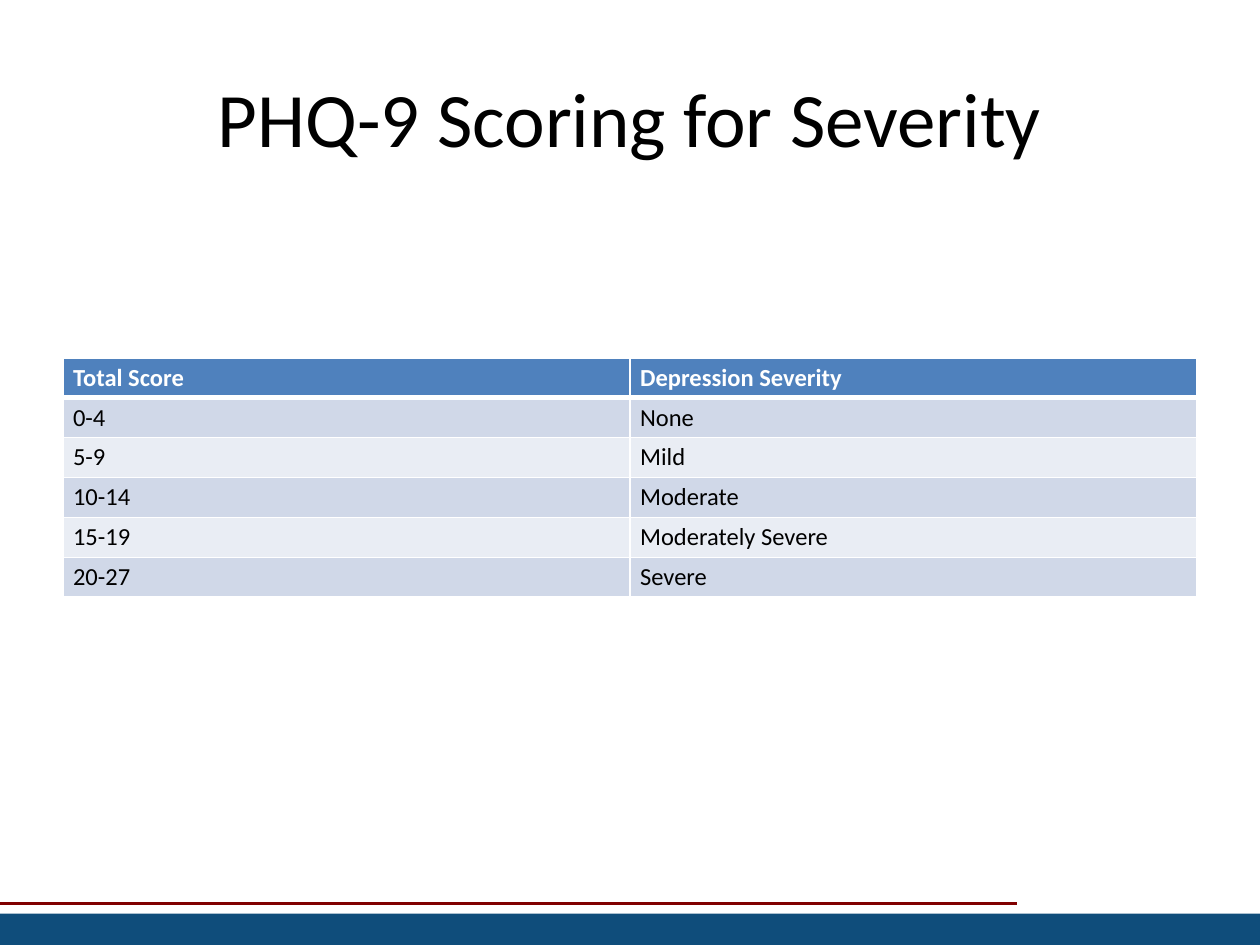
from lxml.etree import SubElement
from pptx import Presentation
from pptx.dml.color import RGBColor
from pptx.enum.shapes import MSO_CONNECTOR, MSO_SHAPE
from pptx.enum.text import MSO_ANCHOR, PP_ALIGN
from pptx.oxml.ns import qn
from pptx.util import Inches, Pt

TITLE = "PHQ-9 Scoring for Severity"
ROWS = [
    ("Total Score", "Depression Severity"),
    ("0-4", "None"),
    ("5-9", "Mild"),
    ("10-14", "Moderate"),
    ("15-19", "Moderately Severe"),
    ("20-27", "Severe"),
]
HEADER_FILL, BAND_FILLS = "4F81BD", ("D0D8E8", "E9EDF4")
TABLE_BOX = (0.5, 2.84, 9, 1.86)
TITLE_BOX = (0.5, 0.3, 9, 1.25)
FOOTER_BOX = (0, 7.25, 10, 0.25)
RULE_ENDS = (-0.01, 7.17, 8.07, 7.17)
CELL_FORMAT = {
    "margin_left": Inches(0.08),
    "margin_right": Inches(0.08),
    "margin_top": Inches(0.04),
    "margin_bottom": Inches(0.04),
    "vertical_anchor": MSO_ANCHOR.TOP,
}


def color(value):
    return RGBColor.from_string(value)


def apply(target, values):
    for name, value in values.items():
        setattr(target, name, value)


def inches(values):
    return [Inches(value) for value in values]


def style_text(paragraph, size, text_color, bold=False):
    apply(paragraph.font, {"name": "Calibri", "size": Pt(size), "bold": bold})
    paragraph.font.color.rgb = color(text_color)


def add_borders(cell, widths):
    properties = cell._tc.get_or_add_tcPr()
    for side, width in widths.items():
        line = SubElement(properties, qn(f"a:ln{side}"), w=str(Pt(width)))
        fill = SubElement(line, qn("a:solidFill"))
        SubElement(fill, qn("a:srgbClr"), val="FFFFFF")


def add_footer(slide):
    rule = slide.shapes.add_connector(MSO_CONNECTOR.STRAIGHT, *inches(RULE_ENDS))
    rule.line.color.rgb = color("800000")
    rule.line.width = Pt(1.5)
    SubElement(rule._element.spPr, qn("a:effectLst"))
    bar = slide.shapes.add_shape(MSO_SHAPE.RECTANGLE, *inches(FOOTER_BOX))
    bar.shadow.inherit = False
    bar.fill.solid()
    bar.fill.fore_color.rgb = color("0F4D7B")
    bar.line.fill.background()


def add_title(slide):
    title = slide.shapes.title
    apply(title, dict(zip(("left", "top", "width", "height"), inches(TITLE_BOX))))
    title.text_frame.text = TITLE
    title.text_frame.vertical_anchor = MSO_ANCHOR.MIDDLE
    paragraph = title.text_frame.paragraphs[0]
    paragraph.alignment = PP_ALIGN.CENTER
    style_text(paragraph, 44, "000000")


def add_score_table(slide):
    frame = slide.shapes.add_table(len(ROWS), len(ROWS[0]), *inches(TABLE_BOX))
    for row_index, texts in enumerate(ROWS):
        header = row_index == 0
        fill = HEADER_FILL if header else BAND_FILLS[(row_index - 1) % 2]
        widths = {"L": 1, "R": 1, "T": 3 if row_index == 1 else 1, "B": 3 if header else 1}
        for column_index, text in enumerate(texts):
            cell = frame.table.cell(row_index, column_index)
            cell.text = text
            apply(cell, CELL_FORMAT)
            add_borders(cell, widths)
            cell.fill.solid()
            cell.fill.fore_color.rgb = color(fill)
            style_text(cell.text_frame.paragraphs[0], 14, "FFFFFF" if header else "000000", header)


def main():
    """Build the depression severity scoring slide."""
    presentation = Presentation()
    apply(presentation, {"slide_width": Inches(10), "slide_height": Inches(7.5)})
    slide = presentation.slides.add_slide(presentation.slide_layouts[5])
    add_footer(slide)
    add_title(slide)
    add_score_table(slide)
    presentation.save("out.pptx")


if __name__ == "__main__":
    main()
